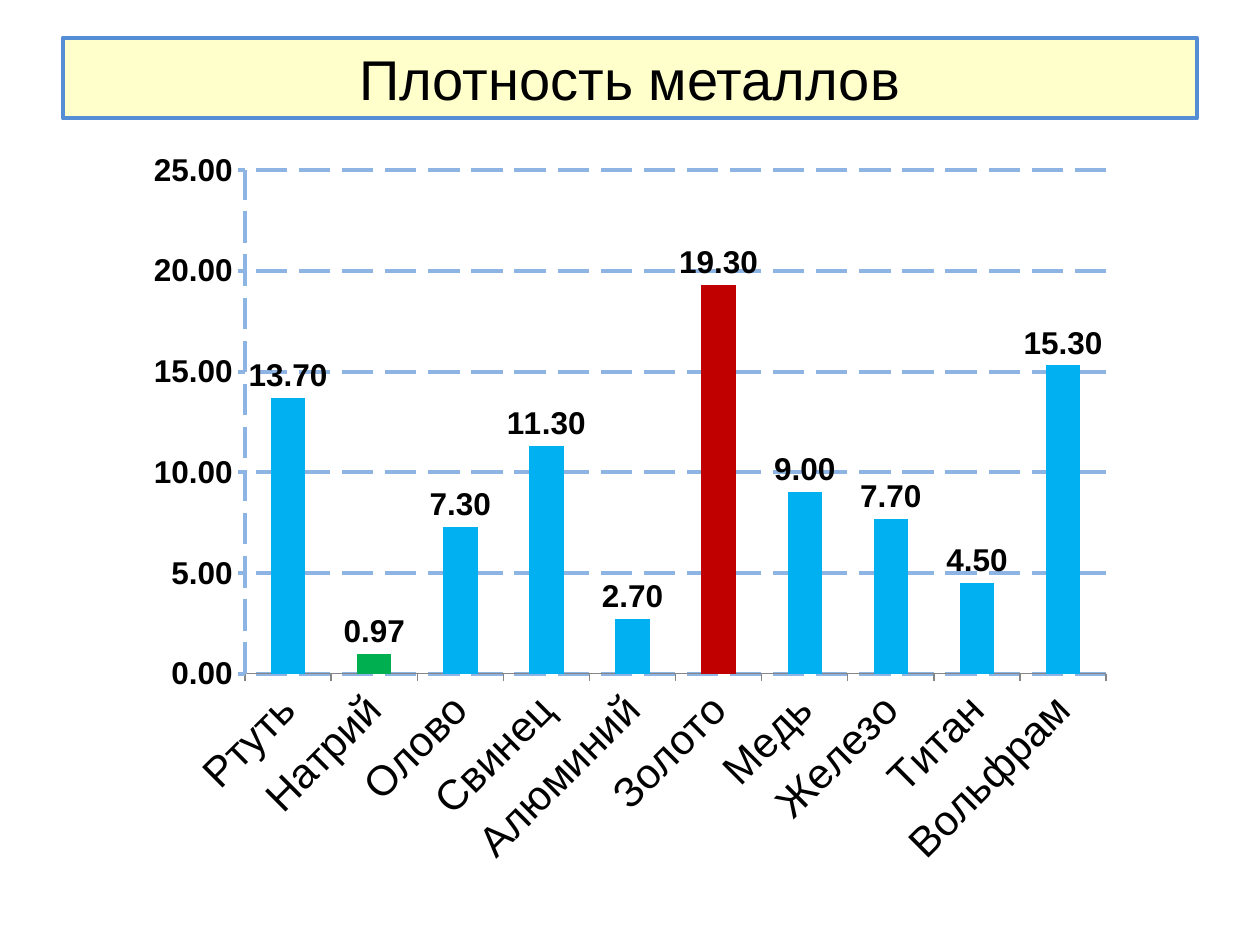
from dataclasses import dataclass

from lxml import etree
from pptx import Presentation
from pptx import util as u
from pptx.chart.data import CategoryChartData
from pptx.dml.color import RGBColor
from pptx.enum import chart as charts, dml, shapes, text


@dataclass(frozen=True)
class Theme:
    font: str = "Arial"
    ink: str = "000000"
    title_fill: str = "FFFFCC"
    title_line: str = "558ED5"
    grid: str = "8EB4E3"
    axis: str = "868686"
    bar: str = "00B0F0"
    lightest: str = "00B050"
    heaviest: str = "C00000"
    title_size: int = 32
    category_size: int = 24
    value_size: int = 18
    line_width: float = 2.25


DENSITIES = {
    "Ртуть": 13.7, "Натрий": 0.97, "Олово": 7.3, "Свинец": 11.3,
    "Алюминий": 2.7, "Золото": 19.3, "Медь": 9, "Железо": 7.7,
    "Титан": 4.5, "Вольфрам": 15.3,
}
NUMBER_FORMAT = "0.00"


def paint(fill, color):
    fill.solid()
    fill.fore_color.rgb = RGBColor.from_string(color)


def format_font(font, theme, size, bold=False):
    font.name = theme.font
    font.size = u.Pt(size)
    font.bold = bold
    font.color.rgb = RGBColor.from_string(theme.ink)


def add_text(shape, content, *, theme, size, align=text.PP_ALIGN.CENTER):
    frame = shape.text_frame
    frame.word_wrap = True
    frame.vertical_anchor = text.MSO_ANCHOR.MIDDLE
    paragraph = frame.paragraphs[0]
    paragraph.alignment = align
    run = paragraph.add_run()
    run.text = content
    format_font(run.font, theme, size)


class SlideBuilder:
    def __init__(self, slide, theme):
        self.slide = slide
        self.theme = theme

    def draw_line(self, line, color, width, dash=None):
        paint(line.fill, color)
        line.width = u.Pt(width)
        if dash is not None:
            line.dash_style = dash

    def title(self, content, left, top, width, height):
        theme = self.theme
        shape = self.slide.shapes.add_shape(
            shapes.MSO_SHAPE.RECTANGLE, left, top, width, height)
        shape.shadow.inherit = False
        paint(shape.fill, theme.title_fill)
        self.draw_line(shape.line, theme.title_line, theme.line_width)
        add_text(shape, content, theme=theme, size=theme.title_size)

    def column_chart(self, values, highlights, left, top, width, height):
        theme = self.theme
        data = CategoryChartData(number_format=NUMBER_FORMAT)
        data.categories = list(values)
        data.add_series("Плотность", list(values.values()))
        chart = self.slide.shapes.add_chart(
            charts.XL_CHART_TYPE.COLUMN_CLUSTERED,
            left, top, width, height, data).chart
        chart.has_legend = False
        chart.has_title = False
        format_font(chart.font, theme, theme.value_size)
        self.style_axes(chart)
        self.style_bars(chart.plots[0], values, highlights)
        self.place_plot(chart, x=0.112, y=0.044, w=0.868, h=0.677)

    def style_axes(self, chart):
        theme = self.theme
        # Slanted category names
        category = chart.category_axis
        category.major_tick_mark = charts.XL_TICK_MARK.OUTSIDE
        format_font(category.tick_labels.font, theme, theme.category_size)
        self.draw_line(category.format.line, theme.axis, 0.75)
        body = category._element.txPr.bodyPr
        body.set("rot", "-2700000")
        body.set("vert", "horz")
        # Dashed value axis and grid
        value = chart.value_axis
        value.minimum_scale, value.maximum_scale, value.major_unit = 0, 25, 5
        value.major_tick_mark = charts.XL_TICK_MARK.OUTSIDE
        value.has_major_gridlines = True
        value.tick_labels.number_format = NUMBER_FORMAT
        value.tick_labels.number_format_is_linked = False
        format_font(value.tick_labels.font, theme, theme.value_size, bold=True)
        for part in (value, value.major_gridlines):
            self.draw_line(part.format.line, theme.grid, theme.line_width,
                           dml.MSO_LINE.LONG_DASH)

    def style_bars(self, plot, values, highlights):
        theme = self.theme
        plot.vary_by_categories = False
        plot.gap_width = 150
        series = plot.series[0]
        series.invert_if_negative = False
        paint(series.format.fill, theme.bar)
        names = list(values)
        for name, color in highlights.items():
            paint(series.points[names.index(name)].format.fill, color)
        labels = series.data_labels
        labels.show_value = True
        labels.position = charts.XL_LABEL_POSITION.OUTSIDE_END
        labels.number_format = NUMBER_FORMAT
        labels.number_format_is_linked = False
        format_font(labels.font, theme, theme.value_size, bold=True)

    def place_plot(self, chart, **fractions):
        area = chart._chartSpace.chart.plotArea
        namespace = "{%s}" % etree.QName(area).namespace
        for old in area.findall(namespace + "layout"):
            area.remove(old)
        layout = etree.Element(namespace + "layout")
        area.insert(0, layout)
        manual = etree.SubElement(layout, namespace + "manualLayout")
        settings = {"layoutTarget": "inner", "xMode": "edge", "yMode": "edge"}
        for tag, setting in {**settings, **fractions}.items():
            etree.SubElement(manual, namespace + tag, val=str(setting))


def main():
    presentation = Presentation()
    presentation.slide_width = u.Cm(25.4)
    presentation.slide_height = u.Cm(19.05)
    slide = presentation.slides.add_slide(presentation.slide_layouts[6])
    theme = Theme()
    builder = SlideBuilder(slide, theme)

    # Density chart, with the lightest and heaviest metals picked out
    highlights = {
        min(DENSITIES, key=DENSITIES.get): theme.lightest,
        max(DENSITIES, key=DENSITIES.get): theme.heaviest,
    }
    builder.column_chart(DENSITIES, highlights,
                         u.Cm(2.7), u.Cm(2.77), u.Cm(20), u.Cm(15))

    # Title band
    builder.title("Плотность металлов",
                  u.Cm(1.27), u.Cm(0.76), u.Cm(22.86), u.Cm(1.63))

    presentation.save("out.pptx")


if __name__ == "__main__":
    main()
